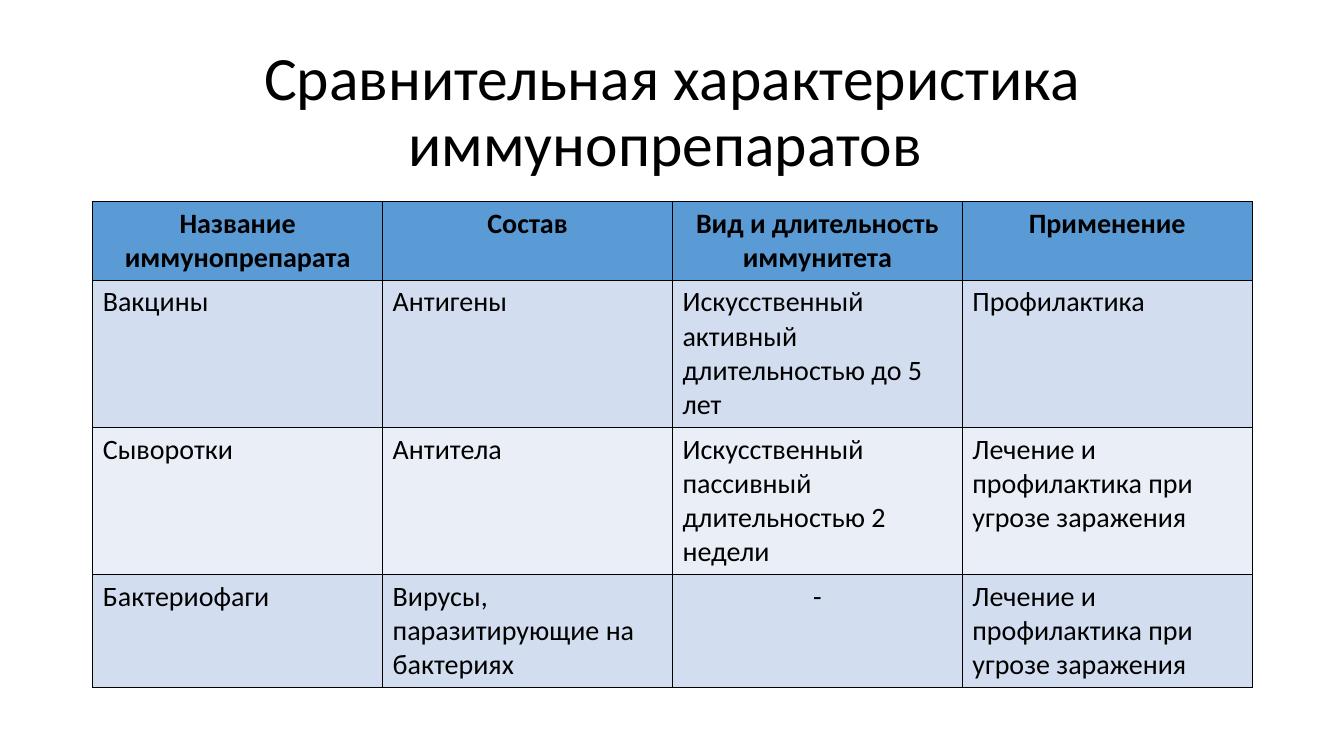
from lxml import etree
from pptx import Presentation
from pptx.dml.color import RGBColor
from pptx.enum.text import MSO_ANCHOR, PP_ALIGN
from pptx.oxml.ns import qn
from pptx.util import Inches, Pt

CENTER, LEFT = PP_ALIGN.CENTER, PP_ALIGN.LEFT
MIDDLE = MSO_ANCHOR.MIDDLE

BLACK = RGBColor(0x00, 0x00, 0x00)
HEADER_BLUE = RGBColor(0x5B, 0x9B, 0xD5)
BAND_DARK = RGBColor(0xD2, 0xDE, 0xEF)
BAND_LIGHT = RGBColor(0xEA, 0xEF, 0xF7)

FONT = "Calibri"
TITLE = "Сравнительная характеристика иммунопрепаратов "
ROWS = [
    ["Название иммунопрепарата", "Состав",
     "Вид и длительность иммунитета", "Применение"],
    ["Вакцины", "Антигены",
     "Искусственный активный длительностью до 5 лет", "Профилактика"],
    ["Сыворотки", "Антитела",
     "Искусственный пассивный длительностью 2 недели",
     "Лечение и профилактика при угрозе заражения"],
    ["Бактериофаги", "Вирусы, паразитирующие на бактериях",
     "-", "Лечение и профилактика при угрозе заражения"],
]
ROW_HEIGHTS = [0.78, 1.46, 1.46, 1.12]


def write_text(text_frame, text, size=20, bold=False, align=LEFT, line_spacing=1.0):
    paragraph = text_frame.paragraphs[0]
    paragraph.alignment = align
    paragraph.line_spacing = line_spacing
    run = paragraph.add_run()
    run.text = text
    run.font.name = FONT
    run.font.size = Pt(size)
    run.font.bold = bold
    run.font.color.rgb = BLACK


def add_borders(cell, color=BLACK, width=1):
    properties = cell._tc.get_or_add_tcPr()
    for side in ("a:lnL", "a:lnR", "a:lnT", "a:lnB"):
        line = etree.SubElement(properties, qn(side), w=str(Pt(width)))
        fill = etree.SubElement(line, qn("a:solidFill"))
        etree.SubElement(fill, qn("a:srgbClr"), val=str(color))


def add_title(slide, left, top, width, height):
    box = slide.shapes.add_textbox(
        Inches(left), Inches(top), Inches(width), Inches(height))
    box.text_frame.word_wrap = True
    box.text_frame.vertical_anchor = MIDDLE
    write_text(box.text_frame, TITLE, size=44, align=CENTER, line_spacing=0.9)


def add_comparison_table(slide, left, top, width):
    table = slide.shapes.add_table(
        len(ROWS), len(ROWS[0]), Inches(left), Inches(top),
        Inches(width), Inches(sum(ROW_HEIGHTS))).table

    for row_index, texts in enumerate(ROWS):
        table.rows[row_index].height = Inches(ROW_HEIGHTS[row_index])
        is_header = row_index == 0
        band = BAND_DARK if row_index % 2 else BAND_LIGHT
        for column_index, text in enumerate(texts):
            cell = table.cell(row_index, column_index)
            add_borders(cell)
            cell.fill.solid()
            cell.fill.fore_color.rgb = HEADER_BLUE if is_header else band
            centered = is_header or text == "-"
            write_text(cell.text_frame, text, bold=is_header,
                       align=CENTER if centered else LEFT)


def main():
    presentation = Presentation()
    presentation.slide_width = Inches(13.33)
    presentation.slide_height = Inches(7.5)
    slide = presentation.slides.add_slide(presentation.slide_layouts[6])

    # Heading above the table, both on the same margins
    add_title(slide, 0.92, 0.4, 11.5, 1.45)
    add_comparison_table(slide, 0.92, 2, 11.5)

    presentation.save("out.pptx")


if __name__ == "__main__":
    main()
